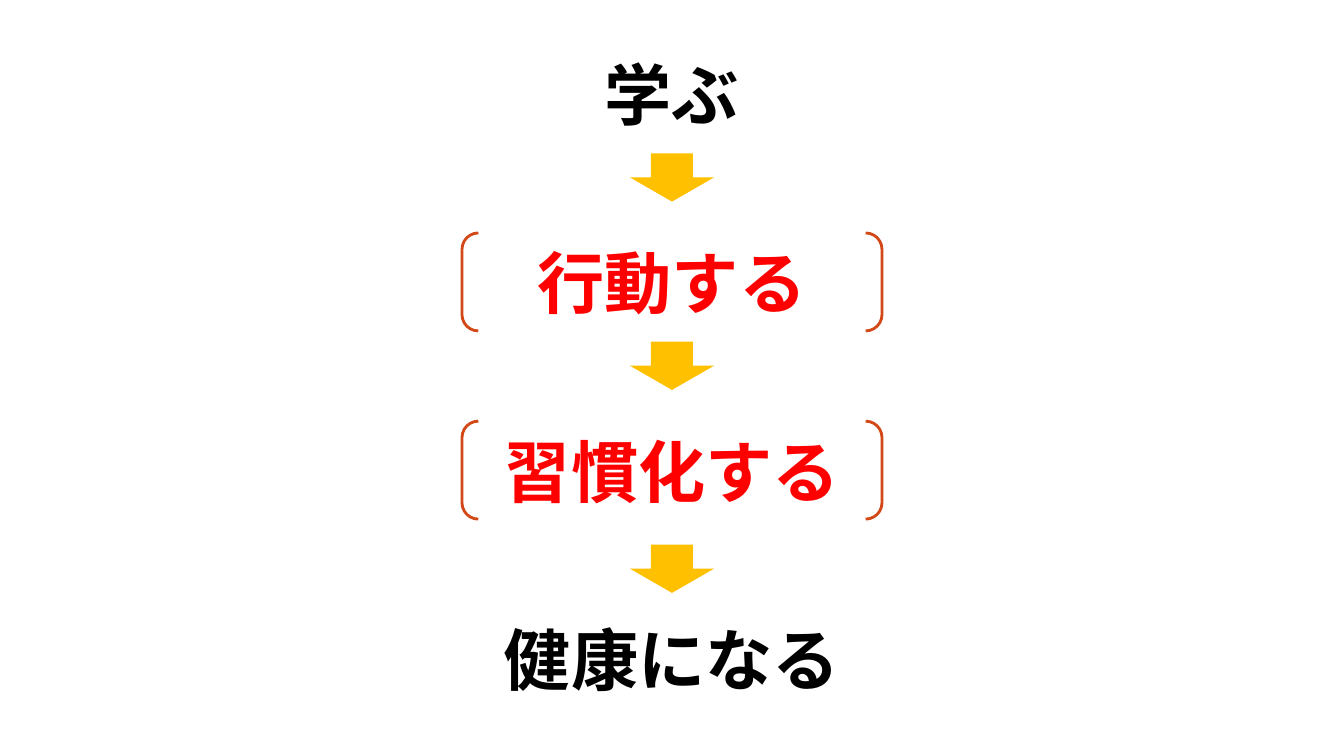
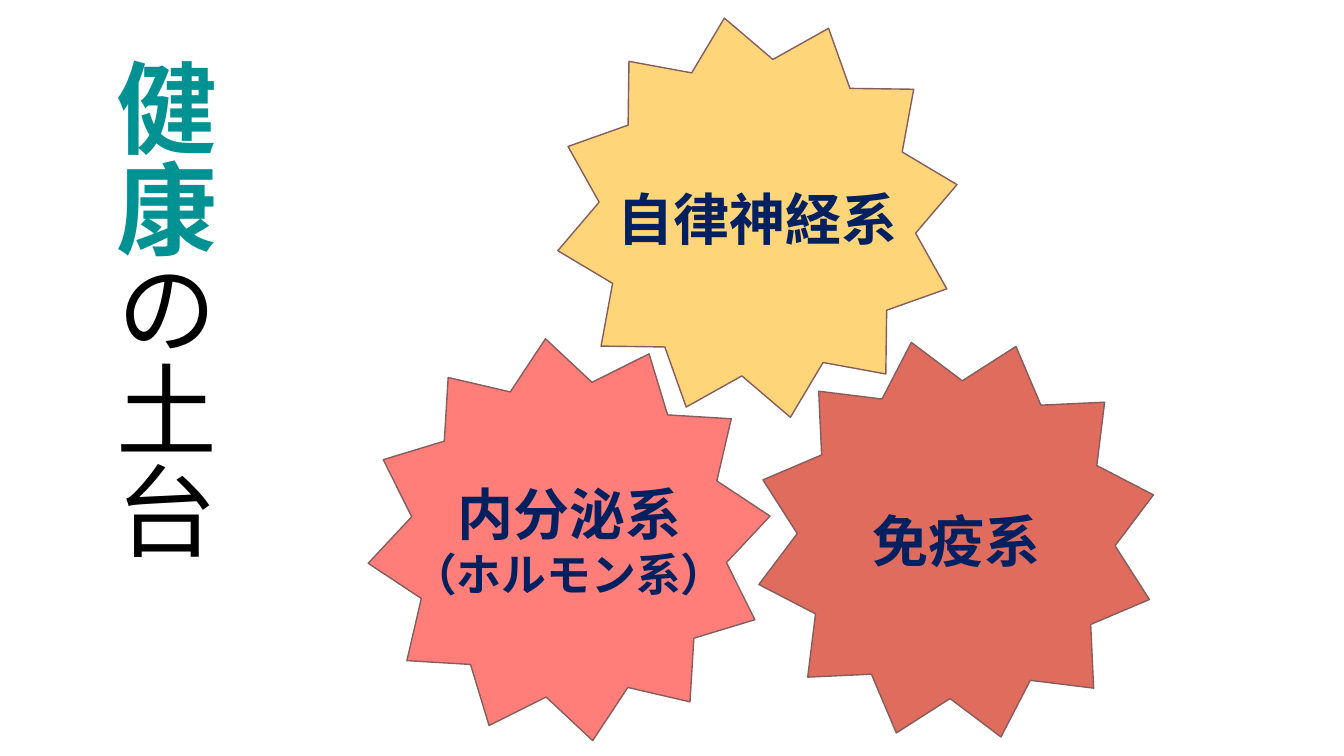
from pptx import Presentation
from pptx.dml.color import RGBColor
from pptx.enum.shapes import MSO_SHAPE as SHAPE
from pptx.enum.text import MSO_ANCHOR as ANCHOR, MSO_AUTO_SIZE as AUTO, PP_ALIGN as ALIGN
from pptx.oxml.ns import qn
from pptx.util import Pt

FONT = "TeX Gyre Bonum"
WIDTH, HEIGHT = 960, 540
BLACK, RED, TEAL, NAVY = "000000", "FF0000", "009193", "002060"
GOLD, ORANGE, BROWN = "FFC000", "D34817", "855D5D"
TITLE_ONLY, BLANK = 5, 6


def color(value):
    return RGBColor.from_string(value)


def add_run(p, text, size, hue, bold=True):
    r = p.add_run()
    r.text = text
    for name, value in {"name": FONT, "size": Pt(size), "bold": bold}.items():
        setattr(r.font, name, value)
    r.font.color.rgb = color(hue)
    # East Asian characters take the same typeface
    ea = r.font._element.makeelement(qn("a:ea"), {"typeface": FONT})
    r.font._element.find(qn("a:latin")).addnext(ea)


def add_label(slide, box, lines, hue):
    """Centred bold text, given as (text, size) lines, in the middle of box."""
    tf = slide.shapes.add_textbox(*map(Pt, box)).text_frame
    for name, value in {"word_wrap": True, "vertical_anchor": ANCHOR.MIDDLE}.items():
        setattr(tf, name, value)
    for i, (text, size) in enumerate(lines):
        p = tf.add_paragraph() if i else tf.paragraphs[0]
        p.alignment = ALIGN.CENTER
        add_run(p, text, size, hue)


def add_preset(slide, kind, box, fill=None, line=None, weight=1):
    sp = slide.shapes.add_shape(kind, *map(Pt, box))
    sp.shadow.inherit = False
    if fill:
        sp.fill.solid()
        sp.fill.fore_color.rgb = color(fill)
    else:
        sp.fill.background()
    if line:
        sp.line.color.rgb = color(line)
        sp.line.width = Pt(weight)
    else:
        sp.line.fill.background()
    return sp


def add_step(slide, top, text, bracketed):
    """One step of the flow, centred on the slide."""
    w, h = 300, 70
    box = ((WIDTH - w) / 2, top, w, h)
    add_label(slide, box, [(text, 48)], RED if bracketed else BLACK)
    if bracketed:
        add_preset(slide, SHAPE.DOUBLE_BRACKET, box, line=ORANGE, weight=2)


def add_gear(slide, left, top, size, turn, fill, lines):
    """A turned star with upright text in its middle."""
    box = (left, top, size, size)
    sp = add_preset(slide, SHAPE.STAR_12_POINT, box, fill, BROWN)
    sp.adjustments[0] = 0.393
    sp.rotation = turn
    add_label(slide, box, lines, NAVY)


def add_vertical_title(slide, box, parts):
    sp = slide.shapes.title
    for name, value in zip(("left", "top", "width", "height"), box):
        setattr(sp, name, Pt(value))
    tf = sp.text_frame
    for name, value in {"word_wrap": True, "auto_size": AUTO.NONE,
                        "vertical_anchor": ANCHOR.TOP}.items():
        setattr(tf, name, value)
    tf._txBody.bodyPr.set("vert", "eaVert")
    p = tf.paragraphs[0]
    p.alignment = ALIGN.LEFT
    for text, hue, bold in parts:
        add_run(p, text, 72, hue, bold)


def build_flow(prs):
    slide = prs.slides.add_slide(prs.slide_layouts[BLANK])
    # Steps at an equal pitch
    steps = [("学ぶ", False), ("行動する", True), ("習慣化する", True), ("健康になる", False)]
    for i, (text, bracketed) in enumerate(steps):
        add_step(slide, 32 + 134.4 * i, text, bracketed)
    # Arrows between the steps
    w, h = 60, 34.5
    for top in (109.5, 244, 389):
        add_preset(slide, SHAPE.DOWN_ARROW, ((WIDTH - w) / 2, top, w, h), GOLD)


def build_foundation(prs):
    slide = prs.slides.add_slide(prs.slide_layouts[TITLE_ONLY])
    add_vertical_title(slide, (65.5, 37.5, 101.5, 464.5),
                       [("健康", TEAL, True), ("の土台", BLACK, False)])
    # Three interlocking gears
    gears = [
        (396.5, 11, 350.6, "FFD579", [("自律神経系", 40)]),
        (538.5, 241, 17.2, "DF6C5D", [("免疫系", 40)]),
        (262, 241, 353.3, "FF7E79", [("内分泌系", 40), ("（ホルモン系）", 32)]),
    ]
    for left, top, turn, fill, lines in gears:
        add_gear(slide, left, top, 289, turn, fill, lines)


def main():
    prs = Presentation()
    prs.slide_width, prs.slide_height = Pt(WIDTH), Pt(HEIGHT)
    build_flow(prs)
    build_foundation(prs)
    prs.save("out.pptx")


if __name__ == "__main__":
    main()
